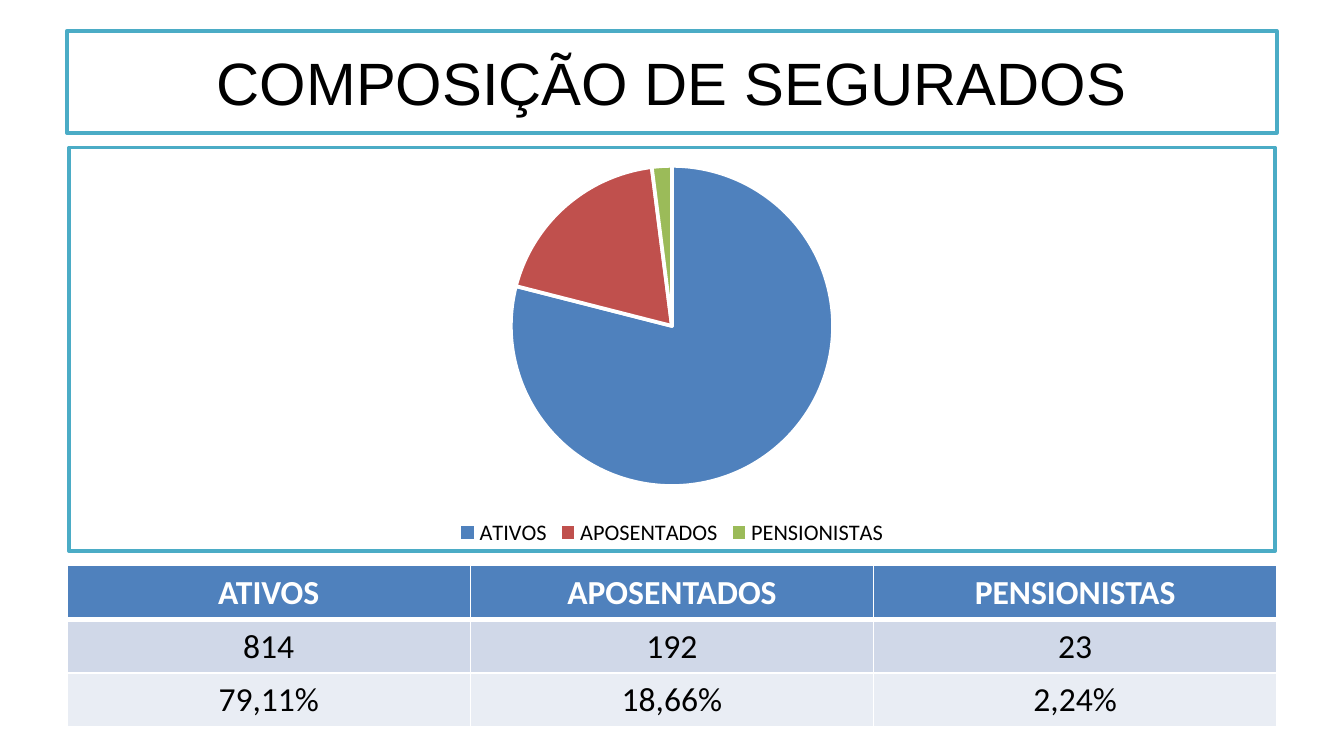
"""Build the slide on the make-up of insured members: title, pie chart and table."""
from dataclasses import dataclass

from lxml import etree
from pptx import Presentation
from pptx import util as u
from pptx.chart.data import CategoryChartData
from pptx.dml.color import RGBColor
from pptx.enum import chart as ch
from pptx.enum import text
from pptx.oxml import parse_xml
from pptx.oxml.ns import nsdecls, qn

PX = 9525


@dataclass(frozen=True)
class Theme:
    white: str = "FFFFFF"
    black: str = "000000"
    frame: str = "4BACC6"
    header: str = "4F81BD"
    bands: tuple[str, ...] = ("D0D8E8", "E9EDF4")
    title_font: str = "Arial"
    body_font: str = "Calibri"
    title_size: int = 32
    cell_size: int = 18
    legend_size: int = 12
    chart_size: int = 10
    frame_width: int = 2
    grid_width: int = 1
    header_rule: int = 3


@dataclass(frozen=True)
class Box:
    x: int
    y: int
    w: int
    h: int

    def emu(self) -> tuple[int, ...]:
        return tuple(v * PX for v in (self.x, self.y, self.w, self.h))


@dataclass(frozen=True)
class Group:
    name: str
    share: int
    count: str
    percent: str
    color: str


T = Theme()
GROUPS = (
    Group("ATIVOS", 79, "814", "79,11%", "4F81BD"),
    Group("APOSENTADOS", 19, "192", "18,66%", "C0504D"),
    Group("PENSIONISTAS", 2, "23", "2,24%", "9BBB59"),
)
TITLE_BOX = Box(48, 22, 864, 73)
CHART_BOX = Box(48, 104, 864, 291)
TABLE_BOX = Box(48, 404, 864, 114)


def rgb(color: str) -> RGBColor:
    return RGBColor.from_string(color)


def style_font(font, name: str, size: int, color: str, bold: bool = False) -> None:
    font.name, font.size, font.bold = name, u.Pt(size), bold
    font.color.rgb = rgb(color)


def fill_solid(fill, color: str) -> None:
    fill.solid()
    fill.fore_color.rgb = rgb(color)


def write(tf, words: str, font: str, size: int, color: str, bold: bool = False) -> None:
    p = tf.paragraphs[0]
    p.alignment = text.PP_ALIGN.CENTER
    r = p.add_run()
    r.text = words
    style_font(r.font, font, size, color, bold)


def add_title(s) -> None:
    sp = s.shapes.add_textbox(*TITLE_BOX.emu())
    fill_solid(sp.fill, T.white)
    sp.line.color.rgb = rgb(T.frame)
    sp.line.width = u.Pt(T.frame_width)
    tf = sp.text_frame
    tf.word_wrap = True
    tf.vertical_anchor = text.MSO_ANCHOR.MIDDLE
    write(tf, "COMPOSIÇÃO DE SEGURADOS", T.title_font, T.title_size, T.black)


def frame_chart(chart) -> None:
    plot_root = chart.element.find(qn("c:chart"))
    plot_root.addprevious(parse_xml(f'<c:roundedCorners {nsdecls("c")} val="0"/>'))
    plot_root.addnext(parse_xml(
        f'<c:spPr {nsdecls("c", "a")}>'
        f'<a:solidFill><a:srgbClr val="{T.white}"/></a:solidFill>'
        f'<a:ln w="{u.Pt(T.frame_width)}"><a:solidFill><a:srgbClr val="{T.frame}"/>'
        "</a:solidFill></a:ln></c:spPr>"))


def add_pie(s) -> None:
    data = CategoryChartData()
    data.categories = [g.name for g in GROUPS]
    data.add_series("Series 1", [g.share for g in GROUPS])
    chart = s.shapes.add_chart(ch.XL_CHART_TYPE.PIE, *CHART_BOX.emu(), data).chart
    style_font(chart.font, T.body_font, T.chart_size, T.black)
    chart.has_title = False
    chart.has_legend = True
    chart.legend.position = ch.XL_LEGEND_POSITION.BOTTOM
    chart.legend.include_in_layout = False
    style_font(chart.legend.font, T.body_font, T.legend_size, T.black)
    plot = chart.plots[0]
    plot.vary_by_categories = True
    for i, g in enumerate(GROUPS):
        fmt = plot.series[0].points[i].format
        fill_solid(fmt.fill, g.color)
        fmt.line.color.rgb = rgb(T.white)
        fmt.line.width = u.Pt(T.frame_width)
    frame_chart(chart)


def set_borders(cell, top: int, bottom: int) -> None:
    tc_pr = cell._tc.get_or_add_tcPr()
    widths = {"lnL": T.grid_width, "lnR": T.grid_width, "lnT": top, "lnB": bottom}
    for i, (side, width) in enumerate(widths.items()):
        ln = etree.Element(qn(f"a:{side}"), w=str(u.Pt(width)))
        solid = etree.SubElement(ln, qn("a:solidFill"))
        etree.SubElement(solid, qn("a:srgbClr"), val=T.white)
        tc_pr.insert(i, ln)


def add_summary_table(s) -> None:
    rows = list(zip(*((g.name, g.count, g.percent) for g in GROUPS)))
    table = s.shapes.add_table(len(rows), len(GROUPS), *TABLE_BOX.emu()).table
    for i, values in enumerate(rows):
        head = i == 0
        for j, value in enumerate(values):
            cell = table.cell(i, j)
            cell.vertical_anchor = text.MSO_ANCHOR.MIDDLE
            fill_solid(cell.fill, (T.header, *T.bands)[i])
            write(cell.text_frame, value, T.body_font, T.cell_size,
                  T.white if head else T.black, head)
            set_borders(cell, T.header_rule if i == 1 else T.grid_width,
                        T.header_rule if head else T.grid_width)


def main() -> None:
    prs = Presentation()
    prs.slide_width, prs.slide_height = 960 * PX, 540 * PX
    s = prs.slides.add_slide(prs.slide_layouts[6])
    add_title(s)
    add_summary_table(s)
    add_pie(s)
    prs.save("out.pptx")


if __name__ == "__main__":
    main()
